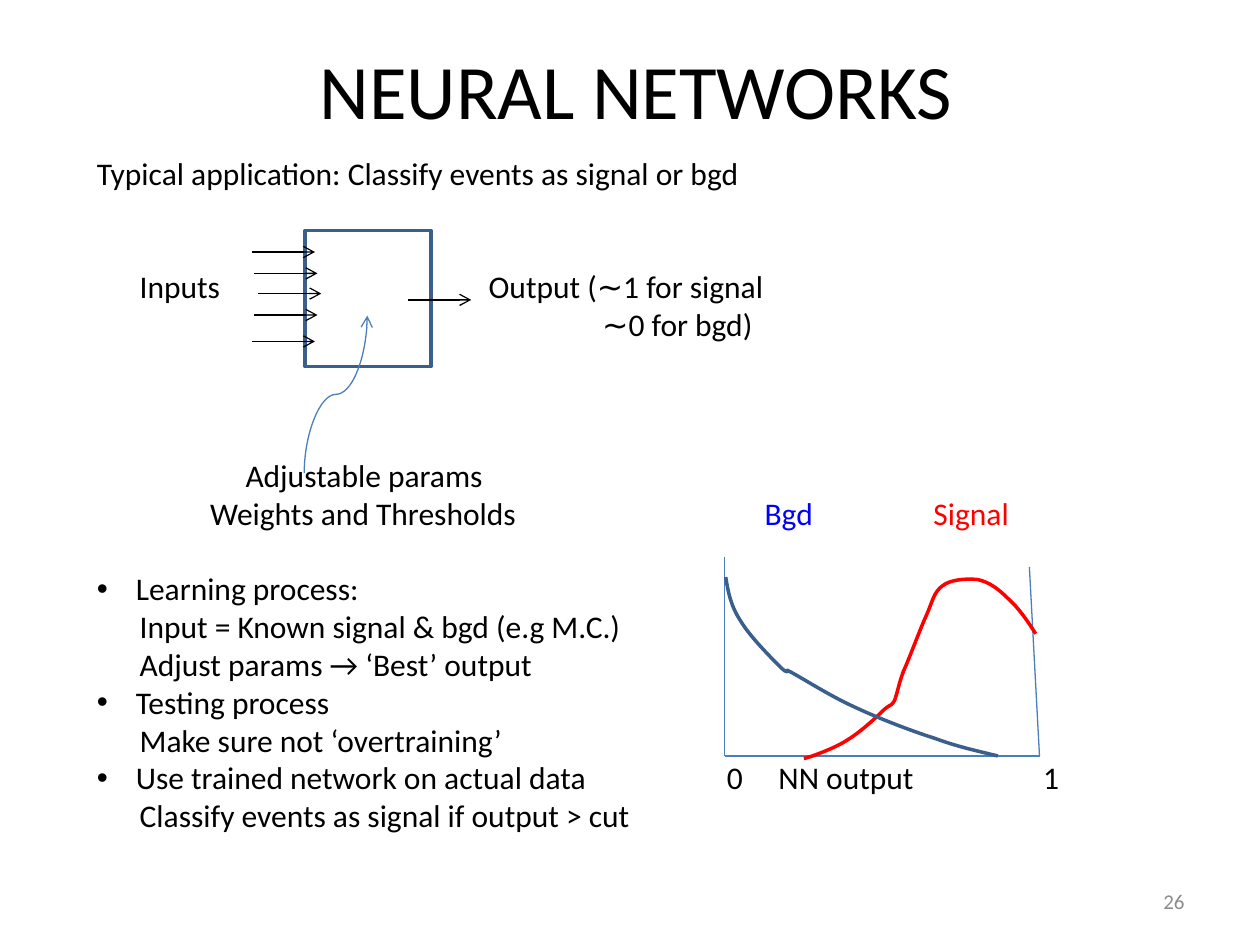
from dataclasses import dataclass

from lxml import etree
from pptx import Presentation
from pptx.dml.color import RGBColor
from pptx.enum.shapes import MSO_CONNECTOR, MSO_SHAPE
from pptx.enum.text import MSO_ANCHOR, PP_ALIGN
from pptx.oxml.ns import qn
from pptx.util import Inches, Pt

STRAIGHT, CURVE = MSO_CONNECTOR.STRAIGHT, MSO_CONNECTOR.CURVE
CENTER, RIGHT = PP_ALIGN.CENTER, PP_ALIGN.RIGHT
TOP, MIDDLE = MSO_ANCHOR.TOP, MSO_ANCHOR.MIDDLE
FONT = "Calibri"
BLACK, GREY, RED, BLUE = "000000", "8C8C8C", "FF0000", "0000FF"
STEEL, DARK_STEEL = "4B7EBC", "3A5F8C"
LINE_PT = 21.6  # height of one body line
HANG, SUB = 0.31, 0.34  # indents of bulleted lines and the lines below them

Point = tuple[float, float]


@dataclass
class Line:
    """One body paragraph: coloured runs, indent, tab stops, lines skipped above."""
    runs: list[tuple[str, str]]
    indent: float = 0
    tabs: tuple[float, ...] = ()
    skip: int = 0
    bullet: bool = False


BODY = [
    Line([("Typical application: Classify events as signal or bgd", BLACK)]),
    Line([("\tInputs\tOutput (∼1 for signal", BLACK)], tabs=(SUB, 3.11), skip=2),
    Line([("∼0 for bgd)", BLACK)], indent=4.01),
    Line([("Adjustable params", BLACK)], indent=1.18, skip=3),
    Line([("\tWeights and Thresholds\t", BLACK), ("Bgd\t", BLUE), ("Signal", RED)],
         tabs=(0.9, 5.3, 6.64)),
    Line([("Learning process:", BLACK)], HANG, skip=1, bullet=True),
    Line([("Input = Known signal & bgd (e.g M.C.)", BLACK)], SUB),
    Line([("Adjust params → ‘Best’ output", BLACK)], SUB),
    Line([("Testing process", BLACK)], HANG, bullet=True),
    Line([("Make sure not ‘overtraining’", BLACK)], SUB),
    Line([("Use trained network on actual data\t0\tNN output\t1", BLACK)], HANG,
         tabs=(5, 5.41, 7.51), bullet=True),
    Line([("Classify events as signal if output > cut", BLACK)], SUB),
]
INPUTS = [(2, 2), (2.02, 2.17), (2.05, 2.33), (2.02, 2.5), (2, 2.71)]
AXES = [(5.75, 4.42), (5.75, 6), (8.25, 6), (8.17, 4.5)]

# Bezier chains: a start point, then two controls and an end per segment
SIGNAL = [
    (8.22, 5.03), (8.15, 4.92), (8.08, 4.82), (8, 4.75),
    (7.92, 4.67), (7.85, 4.62), (7.76, 4.6), (7.67, 4.59), (7.54, 4.6), (7.48, 4.65),
    (7.41, 4.7), (7.4, 4.78), (7.35, 4.89), (7.3, 5), (7.22, 5.22), (7.17, 5.33),
    (7.13, 5.44), (7.12, 5.51), (7.1, 5.56), (7.07, 5.61), (7.08, 5.58), (7.02, 5.63),
    (6.96, 5.69), (6.83, 5.81), (6.73, 5.87), (6.63, 5.94), (6.4, 6.02), (6.38, 6.02),
]
BACKGROUND = [
    (5.76, 4.58), (5.78, 4.7), (5.8, 4.81), (5.88, 4.93),
    (5.95, 5.05), (6.13, 5.23), (6.19, 5.29), (6.26, 5.36), (6.25, 5.32), (6.25, 5.32),
    (6.35, 5.37), (6.58, 5.52), (6.78, 5.61), (6.97, 5.7), (7.23, 5.8), (7.42, 5.86),
    (7.61, 5.93), (7.76, 5.96), (7.92, 6),
]


def rgb(color: str) -> RGBColor:
    return RGBColor.from_string(color)


def add_run(p, text: str, size: float = 18, color: str = BLACK) -> None:
    r = p.add_run()
    r.text = text
    r.font.name, r.font.size = FONT, Pt(size)
    r.font.color.rgb = rgb(color)


def add_box(s, x: float, y: float, w: float, h: float, anchor=TOP):
    tf = s.shapes.add_textbox(Inches(x), Inches(y), Inches(w), Inches(h)).text_frame
    tf.word_wrap = True
    tf.vertical_anchor = anchor
    return tf


def add_body_line(p, line: Line) -> None:
    p.space_before = Pt(line.skip * LINE_PT)
    pPr = p._p.get_or_add_pPr()
    pPr.set("marL", str(Inches(line.indent)))
    if line.bullet:
        pPr.set("indent", str(-Inches(line.indent)))
        etree.SubElement(pPr, qn("a:buFont")).set("typeface", "Arial")
        etree.SubElement(pPr, qn("a:buChar")).set("char", "•")
    if line.tabs:
        stops = etree.SubElement(pPr, qn("a:tabLst"))
        for x in line.tabs:
            etree.SubElement(stops, qn("a:tab"), pos=str(Inches(x)), algn="l")
    for text, color in line.runs:
        add_run(p, text, color=color)


def add_line(s, start: Point, end: Point, color: str, arrow: bool = False, kind=STRAIGHT):
    line = s.shapes.add_connector(kind, *(Inches(v) for v in (*start, *end)))
    line.line.color.rgb = rgb(color)
    line.line.width = Pt(0.75)
    if arrow:
        etree.SubElement(line.line._get_or_add_ln(), qn("a:tailEnd")).set("type", "arrow")
    etree.SubElement(line._element.spPr, qn("a:effectLst"))
    return line


def outline(shape, color: str) -> None:
    shape.shadow.inherit = False
    shape.fill.background()
    shape.line.color.rgb = rgb(color)
    shape.line.width = Pt(2)


def add_curve(s, chain: list[Point], color: str) -> None:
    points = [(Inches(x), Inches(y)) for x, y in chain]
    fb = s.shapes.build_freeform(*points[0])
    fb.add_line_segments(points[1:], close=False)
    shape = fb.convert_to_shape()
    # Join every three straight segments into one cubic segment
    segments = list(shape._element.iter(qn("a:lnTo")))
    for i in range(0, len(segments), 3):
        cubic = etree.Element(qn("a:cubicBezTo"))
        segments[i].addprevious(cubic)
        for segment in segments[i:i + 3]:
            cubic.append(segment[0])
            segment.getparent().remove(segment)
    outline(shape, color)


def main() -> None:
    prs = Presentation()
    prs.slide_width, prs.slide_height = Inches(10), Inches(7.5)
    s = prs.slides.add_slide(prs.slide_layouts[5])

    # Title and page number
    title = s.shapes.title
    title.left, title.top = Inches(0.55), Inches(0.08)
    title.width, title.height = Inches(9), Inches(1.25)
    title.text_frame.vertical_anchor = MIDDLE
    p = title.text_frame.paragraphs[0]
    p.alignment = CENTER
    add_run(p, "NEURAL NETWORKS", 44)
    p = add_box(s, 7.17, 6.95, 2.33, 0.4, MIDDLE).paragraphs[0]
    p.alignment = RIGHT
    add_run(p, "26", 12, GREY)

    # Body text
    tf = add_box(s, 0.67, 1.17, 8.58, 5.55)
    for i, line in enumerate(BODY):
        add_body_line(tf.add_paragraph() if i else tf.paragraphs[0], line)

    # Network box with its inputs and output
    box = s.shapes.add_shape(MSO_SHAPE.RECTANGLE, Inches(2.42), Inches(1.83),
                             Inches(1), Inches(1.08))
    outline(box, DARK_STEEL)
    for x, y in INPUTS:
        add_line(s, (x, y), (x + 0.5, y), BLACK, arrow=True)
    add_line(s, (3.24, 2.38), (3.74, 2.38), BLACK, arrow=True)

    # Output distributions
    for start, end in zip(AXES, AXES[1:]):
        add_line(s, start, end, STEEL)
    add_curve(s, SIGNAL, RED)
    add_curve(s, BACKGROUND, DARK_STEEL)

    # Curved arrow from the parameters, turned a quarter so it leaves upwards
    curve = add_line(s, (3.29, 3.38), (2.04, 2.88), STEEL, arrow=True, kind=CURVE)
    curve._element.spPr.find(qn("a:xfrm")).set("rot", str(90 * 60000))

    prs.save("out.pptx")


if __name__ == "__main__":
    main()
